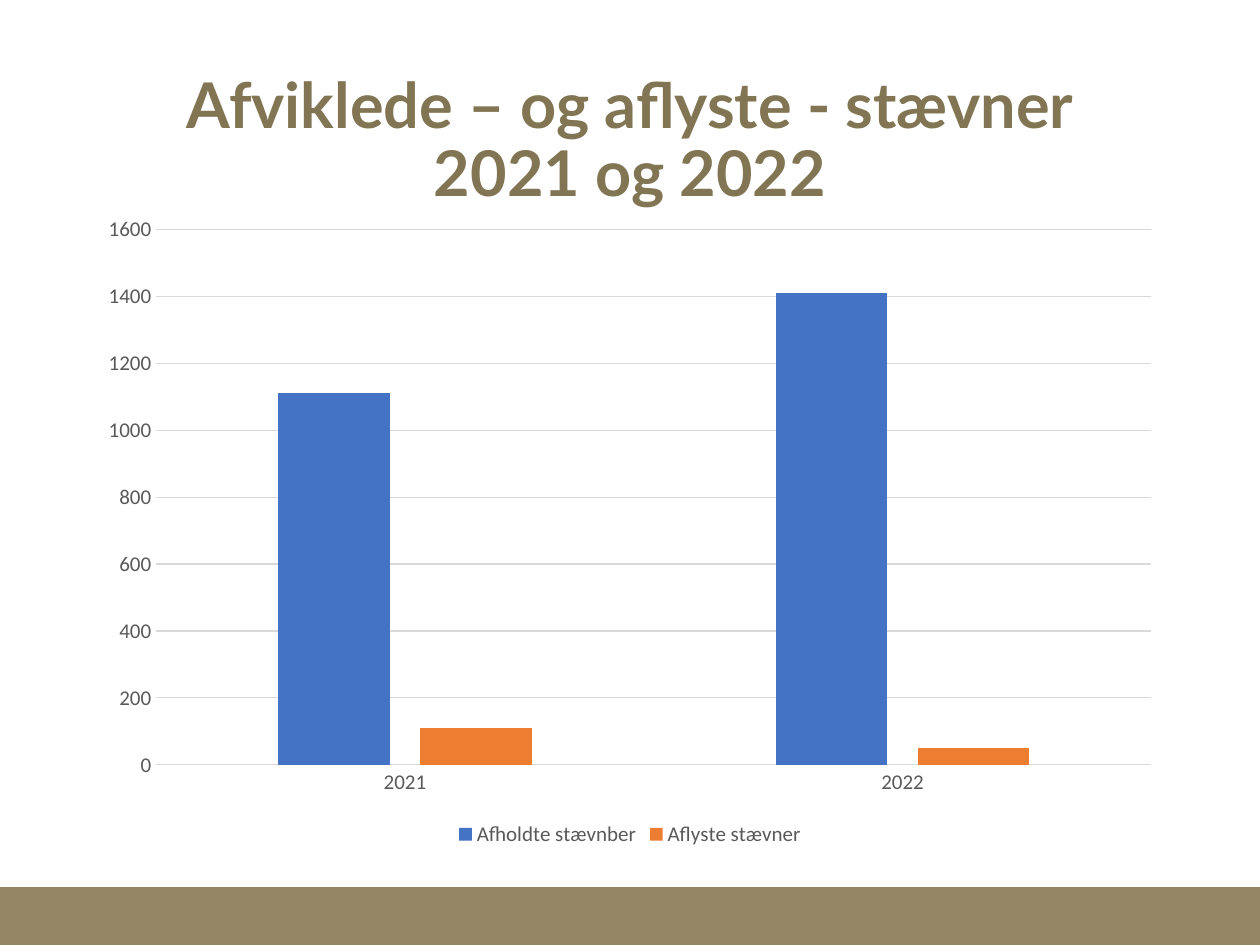
from dataclasses import dataclass

from pptx import Presentation
from pptx.chart.data import CategoryChartData
from pptx.dml.color import RGBColor
from pptx.enum.chart import XL_CHART_TYPE, XL_LEGEND_POSITION, XL_TICK_MARK
from pptx.enum.shapes import MSO_SHAPE
from pptx.enum.text import MSO_ANCHOR, MSO_AUTO_SIZE, PP_ALIGN
from pptx.util import Inches, Pt

COLORS = {
    "band": "958766",
    "title": "827553",
    "label": "595959",
    "grid": "D9D9D9",
    "held": "4472C4",
    "cancelled": "ED7D31",
}
MARGIN = Inches(0.69)
CONTENT_WIDTH = Inches(8.62)


@dataclass(frozen=True)
class EventSeries:
    name: str
    values: tuple[int, ...]
    color: str


YEARS = ("2021", "2022")
EVENT_SERIES = (
    EventSeries("Afholdte stævnber", (1110, 1410), "held"),
    EventSeries("Aflyste stævner", (110, 50), "cancelled"),
)


def rgb(name: str) -> RGBColor:
    return RGBColor.from_string(COLORS[name])


def format_font(font, name: str, size: float, color: str, bold: bool = False) -> None:
    font.name = name
    font.size = Pt(size)
    font.bold = bold
    font.color.rgb = rgb(color)


def format_line(line) -> None:
    line.color.rgb = rgb("grid")
    line.width = Pt(0.75)


def add_title(slide) -> None:
    title = slide.shapes.title
    title.left, title.top = MARGIN, Inches(0.4)
    title.width, title.height = CONTENT_WIDTH, Inches(1.45)
    text_frame = title.text_frame
    text_frame.text = "Afviklede – og aflyste - stævner\v2021 og 2022"
    text_frame.word_wrap = True
    text_frame.auto_size = MSO_AUTO_SIZE.NONE
    text_frame.vertical_anchor = MSO_ANCHOR.MIDDLE
    paragraph = text_frame.paragraphs[0]
    paragraph.alignment = PP_ALIGN.CENTER
    paragraph.line_spacing = 0.9
    for run in paragraph.runs:
        format_font(run.font, "Lato", 36, "title", bold=True)


def add_footer_band(slide) -> None:
    band = slide.shapes.add_shape(
        MSO_SHAPE.RECTANGLE, 0, Inches(7.04), Inches(10), Inches(0.46)
    )
    band.shadow.inherit = False
    band.fill.solid()
    band.fill.fore_color.rgb = rgb("band")
    band.line.fill.background()
    slide.shapes.title.element.addprevious(band.element)


def add_event_chart(slide) -> None:
    chart_data = CategoryChartData()
    chart_data.categories = YEARS
    for event_series in EVENT_SERIES:
        chart_data.add_series(event_series.name, event_series.values)
    chart = slide.shapes.add_chart(
        XL_CHART_TYPE.COLUMN_CLUSTERED,
        MARGIN, Inches(1.62), CONTENT_WIDTH, Inches(5.14),
        chart_data,
    ).chart
    chart.has_title = False
    chart.font.name = "Calibri"
    chart.font.size = Pt(10)

    plot = chart.plots[0]
    plot.vary_by_categories = False
    plot.gap_width = 219
    plot.overlap = -27
    for series, event_series in zip(plot.series, EVENT_SERIES):
        series.format.fill.solid()
        series.format.fill.fore_color.rgb = rgb(event_series.color)

    for axis in (chart.category_axis, chart.value_axis):
        axis.major_tick_mark = XL_TICK_MARK.NONE
        axis.minor_tick_mark = XL_TICK_MARK.NONE
        format_font(axis.tick_labels.font, "Calibri", 12, "label")
    format_line(chart.category_axis.format.line)

    value_axis = chart.value_axis
    value_axis.minimum_scale = 0
    value_axis.maximum_scale = 1600
    value_axis.major_unit = 200
    value_axis.format.line.fill.background()
    format_line(value_axis.major_gridlines.format.line)

    chart.has_legend = True
    chart.legend.position = XL_LEGEND_POSITION.BOTTOM
    chart.legend.include_in_layout = False
    format_font(chart.legend.font, "Calibri", 12, "label")


def main() -> None:
    presentation = Presentation()
    presentation.slide_width = Inches(10)
    presentation.slide_height = Inches(7.5)
    slide = presentation.slides.add_slide(
        presentation.slide_layouts.get_by_name("Title Only")
    )
    add_title(slide)
    add_footer_band(slide)
    add_event_chart(slide)
    presentation.save("out.pptx")


if __name__ == "__main__":
    main()
